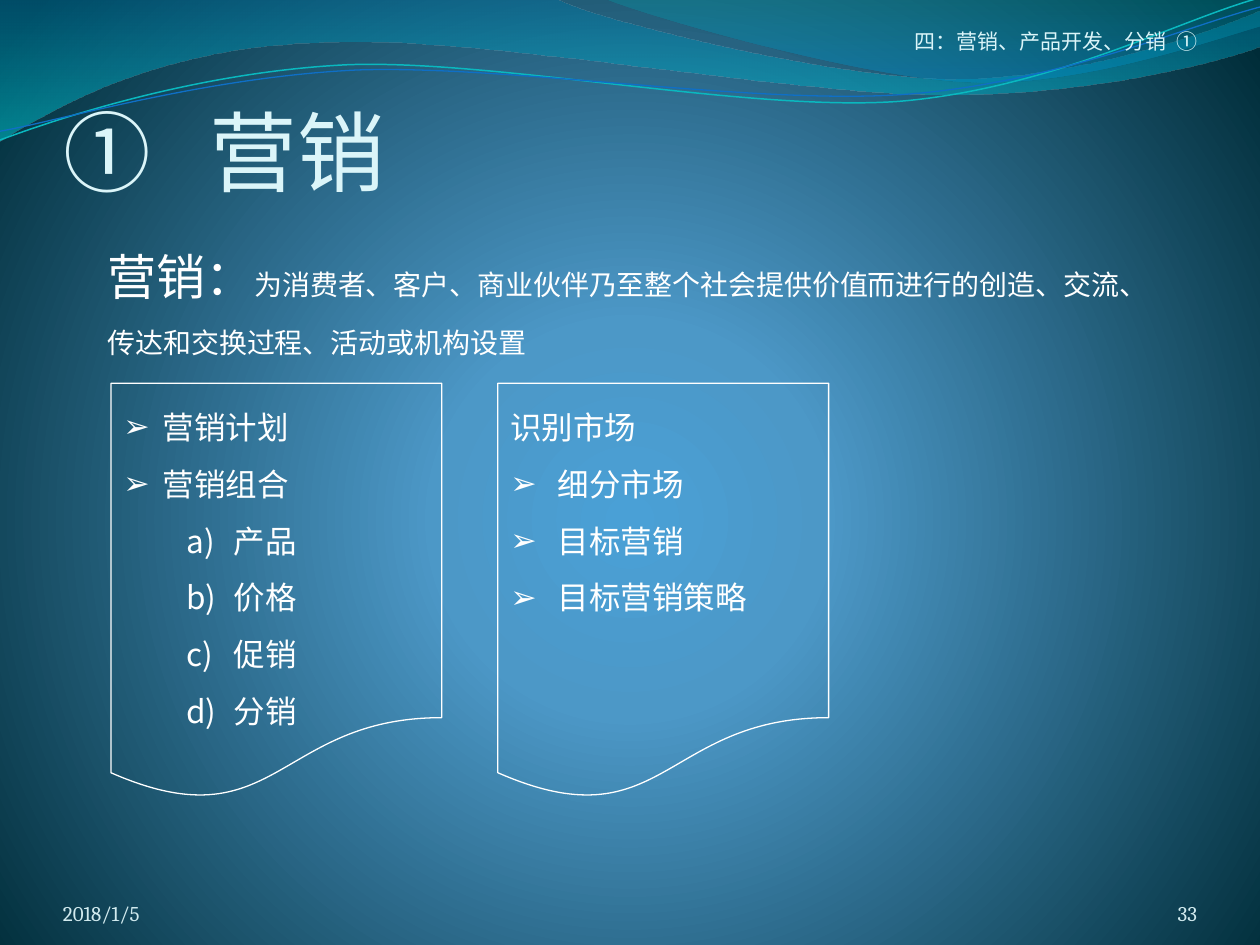
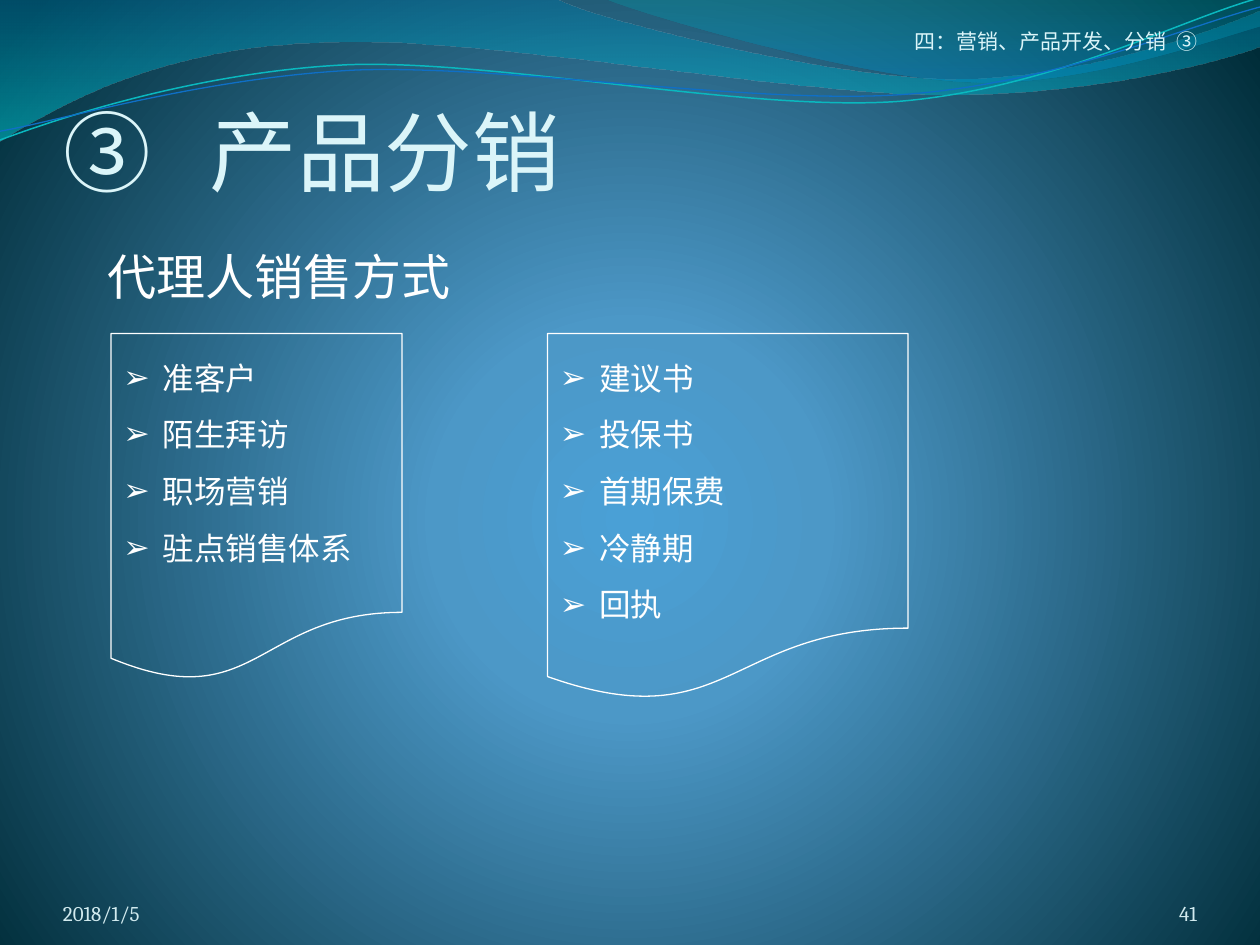
from dataclasses import dataclass
from typing import NamedTuple

import lxml.etree
import pptx
import pptx.dml.color
import pptx.enum.lang
import pptx.enum.shapes
import pptx.enum.text
import pptx.oxml.ns
import pptx.util

Pt = pptx.util.Pt
qn = pptx.oxml.ns.qn
ALIGN = pptx.enum.text.PP_ALIGN
ANCHOR = pptx.enum.text.MSO_ANCHOR


class Box(NamedTuple):
    left: float
    top: float
    width: float
    height: float


@dataclass(frozen=True)
class Theme:
    title_color: str = "DBF5F9"
    footer_color: str = "D1EAEE"
    text_color: str = "FFFFFF"
    teal_line: str = "0AB8BF"
    blue_line: str = "0F6FC6"
    # Gradient stops: position, colour, opacity (all in percent)
    backdrop: tuple = ((0, "4AA0D6", 100), (25, "4C98C7", 100), (100, "002C38", 100))
    wide_wave: tuple = ((0, "0074A1", 45), (100, "00C6CF", 55))
    corner_wave: tuple = ((0, "00A1A9", 30), (80, "008BBF", 45))
    heading_font: str = "Calibri"
    body_font: str = "Cambria"
    panel_font: str = "Times New Roman"
    title_size: int = 50
    lead_size: int = 28
    panel_size: int = 18
    detail_size: int = 16
    small_size: int = 12


THEME = Theme()
SLIDE = Box(0, 0, 720, 540)
TITLE = Box(36, 43.2, 576.7, 72.7)
HEADER = Box(456.5, 0, 227.5, 30.5)
DATE = Box(36, 500.4, 167.8, 28.8)
NUMBER = Box(624.2, 500.4, 59.8, 28.8)

# Each wave is a start point, then segments: one point is a line, three a Bézier curve
WIDE_WAVE = [
    (0, 0), [(317, -0.7)],
    [(342.7, 12.2), (478, 45.4), (545.8, 45.4)],
    [(614.2, 45.4), (689.8, 18.7), (720, 6.5)],
    [(720.7, 26)],
    [(707.8, 31.7), (626.4, 54.7), (537, 54)],
    [(447.8, 54), (275, 20.2), (185, 24.5)],
    [(93, 26), (33, 59.8), (-0.7, 81.4)],
    [(0, 0)],
]
CORNER_WAVE = [
    (345, -0.7),
    [(366.5, 8), (491, 44.6), (553.7, 46.8)],
    [(616.3, 49.7), (692, 23), (720, 15.1)],
    [(720, 0)],
    [(345, -0.7)],
]
TEAL_WAVE = [
    (0, 80),
    [(34.6, 67), (113.8, 41), (199.4, 37.4)],
    [(284.4, 33.8), (427, 64.1), (513.4, 57.6)],
    [(599.8, 51.1), (675.4, 10.8), (718.6, -1.4)],
]
BLUE_WAVE = [
    (0, 75),
    [(33.8, 69.1), (118, 44), (203.8, 40.3)],
    [(290.2, 36.7), (429.8, 60.5), (516.2, 54)],
    [(602, 48.2), (677.5, 15.1), (720, 4.3)],
]


def rgb(color):
    return pptx.dml.color.RGBColor.from_string(color)


def add_xml(parent, tag, **attributes):
    return lxml.etree.SubElement(parent, qn(tag), attributes)


def paint_gradient(fill, owner, stops, radial=False):
    """Fill owner with the stops, top to bottom or outwards from the centre."""
    fill.gradient()
    gradient = next(owner.iter(qn("a:gradFill")))
    for child in list(gradient):
        gradient.remove(child)
    stop_list = add_xml(gradient, "a:gsLst")
    for position, color, opacity in stops:
        stop = add_xml(stop_list, "a:gs", pos=str(position * 1000))
        shade = add_xml(stop, "a:srgbClr", val=color)
        if opacity < 100:
            add_xml(shade, "a:alpha", val=str(opacity * 1000))
    if radial:
        circle = add_xml(gradient, "a:path", path="circle")
        add_xml(circle, "a:fillToRect", l="10000", t="110000", r="10000", b="100000")
    else:
        add_xml(gradient, "a:lin", ang="5400000", scaled="1")


def bend(wave, segments):
    """Join the three lines of each curved segment into one Bézier curve."""
    lines = iter(list(wave._element.iter(qn("a:lnTo"))))
    for segment in segments:
        steps = [next(lines) for _ in segment]
        if len(steps) == 3:
            curve = lxml.etree.Element(qn("a:cubicBezTo"))
            steps[0].addprevious(curve)
            for step in steps:
                curve.append(step[0])
                step.getparent().remove(step)


def add_wave(slide, outline, closed):
    start, *segments = outline
    builder = slide.shapes.build_freeform(*start, scale=float(Pt(1)))
    builder.add_line_segments([point for segment in segments for point in segment],
                              close=closed)
    wave = builder.convert_to_shape()
    wave.shadow.inherit = False
    bend(wave, segments)
    return wave


def add_waves(slide):
    for outline, stops in ((WIDE_WAVE, THEME.wide_wave), (CORNER_WAVE, THEME.corner_wave)):
        band = add_wave(slide, outline, closed=True)
        paint_gradient(band.fill, band._element.spPr, stops)
        band.line.fill.background()
    for outline, color, width in ((TEAL_WAVE, THEME.teal_line, 0.85),
                                  (BLUE_WAVE, THEME.blue_line, 0.75)):
        ribbon = add_wave(slide, outline, closed=False)
        ribbon.fill.background()
        ribbon.line.color.rgb = rgb(color)
        ribbon.line.width = Pt(width)


def add_run(paragraph, words, size, font, color):
    run = paragraph.add_run()
    run.text = words
    run.font.size = Pt(size)
    run.font.name = font
    run.font.color.rgb = rgb(color)
    run.font.language_id = pptx.enum.lang.MSO_LANGUAGE_ID.SIMPLIFIED_CHINESE


def add_text_area(slide, box):
    area = slide.shapes.add_textbox(*map(Pt, box)).text_frame
    area.word_wrap = True
    return area


def add_label(slide, box, words, size, font, color, align=ALIGN.LEFT, inset_top=0):
    """One line standing on the bottom of its box."""
    label = add_text_area(slide, box)
    label.vertical_anchor = ANCHOR.BOTTOM
    label.margin_left = label.margin_right = label.margin_bottom = 0
    label.margin_top = Pt(inset_top)
    line = label.paragraphs[0]
    line.alignment = align
    add_run(line, words, size, font, color)
    return line


def add_lead(slide, box, runs):
    line = add_text_area(slide, box).paragraphs[0]
    line.line_spacing = 1.6
    line.space_before = Pt(5.6)
    for words, size, font in runs:
        add_run(line, words, size, font, THEME.text_color)


def set_bullet(paragraph, kind, hang):
    properties = paragraph._p.get_or_add_pPr()
    indent = hang if kind == "arrow" else 63
    properties.set("marL", str(Pt(indent)))
    properties.set("indent", str(-Pt(hang)))
    add_xml(properties, "a:buFont", typeface=THEME.heading_font)
    if kind == "arrow":
        add_xml(properties, "a:buChar", char="➢")
    else:
        paragraph.level = 1
        add_xml(properties, "a:buAutoNum", type="alphaLcParenR")


def add_panel(slide, box, items):
    """Document shape; items are (words, bullet kind or None, hanging indent)."""
    panel = slide.shapes.add_shape(
        pptx.enum.shapes.MSO_SHAPE.FLOWCHART_DOCUMENT, *map(Pt, box))
    panel.shadow.inherit = False
    panel.fill.background()
    panel.line.color.rgb = rgb(THEME.text_color)
    panel.line.width = Pt(0.75)
    listing = panel.text_frame
    listing.word_wrap = True
    listing.vertical_anchor = ANCHOR.TOP
    for index, (words, kind, hang) in enumerate(items):
        line = listing.add_paragraph() if index else listing.paragraphs[0]
        line.alignment = ALIGN.LEFT
        line.line_spacing = 1.5
        if kind:
            set_bullet(line, kind, hang)
        add_run(line, words, THEME.panel_size, THEME.panel_font, THEME.text_color)


def bulleted(words, kind="arrow", hang=22.5):
    return [(word, kind, hang) for word in words.split()]


def add_title(slide, mark, topic):
    line = add_label(slide, TITLE, f"{mark}\t{topic}", THEME.title_size,
                     THEME.heading_font, THEME.title_color, inset_top=3.6)
    tabs = add_xml(line._p.get_or_add_pPr(), "a:tabLst")
    add_xml(tabs, "a:tab", pos=str(Pt(84)), algn="l")


def add_header(slide, mark):
    style = (THEME.small_size, THEME.heading_font, THEME.title_color)
    line = add_label(slide, HEADER, "四：营销、产品开发、分销", *style,
                     align=ALIGN.RIGHT, inset_top=3.6)
    add_run(line, " ", *style)
    line.runs[-1].font._element.set("spc", "270")
    add_run(line, mark, *style)


def add_section_slide(deck, mark, topic, number):
    """Slide with backdrop, waves, header, title and footer."""
    slide = deck.slides.add_slide(deck.slide_layouts[6])
    paint_gradient(slide.background.fill, slide._element, THEME.backdrop, radial=True)
    add_waves(slide)
    footer_style = (THEME.small_size, THEME.body_font, THEME.footer_color)
    add_label(slide, DATE, "2018/1/5", *footer_style)
    add_label(slide, NUMBER, number, *footer_style, align=ALIGN.RIGHT)
    add_header(slide, mark)
    add_title(slide, mark, topic)
    return slide


def add_marketing_slide(deck):
    slide = add_section_slide(deck, "①", "营销", "33")
    add_lead(slide, Box(54.4, 117, 612, 62), [
        ("营销：", THEME.lead_size, THEME.body_font),
        ("为消费者、客户、商业伙伴乃至整个社会提供价值而进行的创造、交流、"
         "传达和交换过程、活动或机构设置", THEME.detail_size, THEME.body_font),
    ])
    plan = bulleted("营销计划 营销组合") + bulleted("产品 价格 促销 分销", "letter", 27)
    market = [("识别市场", None, 0)] + bulleted("细分市场 目标营销 目标营销策略", hang=27)
    for column, items in enumerate((plan, market)):
        add_panel(slide, Box(63.4 + column * 221.1, 219, 189, 238.3), items)


def add_distribution_slide(deck):
    slide = add_section_slide(deck, "③", "产品分销", "41")
    add_panel(slide, Box(63.4, 190.6, 166.3, 198.7),
              bulleted("准客户 陌生拜访 职场营销 驻点销售体系"))
    add_lead(slide, Box(54.4, 117, 237.6, 62),
             [("代理人销售方式", THEME.lead_size, THEME.panel_font)])
    add_panel(slide, Box(312.9, 190.6, 206, 209.9),
              bulleted("建议书 投保书 首期保费 冷静期 回执"))


def main():
    deck = pptx.Presentation()
    deck.slide_width, deck.slide_height = Pt(SLIDE.width), Pt(SLIDE.height)
    add_marketing_slide(deck)
    add_distribution_slide(deck)
    deck.save("out.pptx")


if __name__ == "__main__":
    main()
